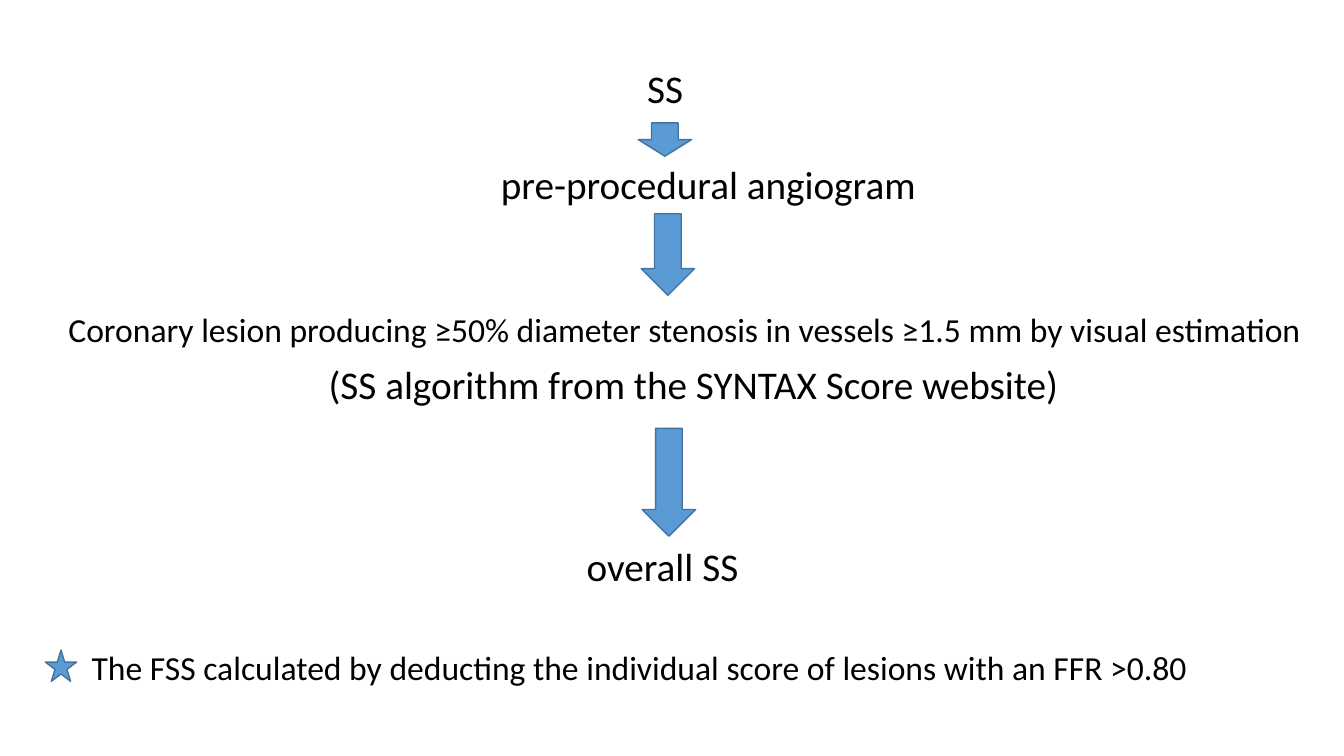
from dataclasses import dataclass

from pptx import Presentation
from pptx.dml.color import RGBColor
from pptx.enum import shapes, text
from pptx.util import Inches, Pt


@dataclass(frozen=True)
class Theme:
    font: str = "Calibri"
    ink: RGBColor = RGBColor(0x00, 0x00, 0x00)
    fill: RGBColor = RGBColor(0x5B, 0x9B, 0xD5)
    outline: RGBColor = RGBColor(0x43, 0x73, 0x9E)
    step_size: int = 28
    detail_size: int = 24


THEME = Theme()

STEPS = [
    ("SS", THEME.step_size, (5.87, 0, 0.56, 0.57)),
    ("pre-procedural angiogram", THEME.step_size, (4.42, 0.95, 4.36, 0.57)),
    ("Coronary lesion producing ≥50% diameter stenosis in vessels ≥1.5 mm by visual estimation",
     THEME.detail_size, (0.13, 2.43, 12.7, 0.5)),
    ("(SS algorithm from the SYNTAX Score website)", THEME.step_size, (2.71, 2.94, 7.52, 0.57)),
    ("overall SS", THEME.step_size, (5.27, 4.74, 1.72, 0.57)),
]
ARROWS = [(5.88, 0.63, 0.33), (5.91, 1.53, 0.81), (5.92, 3.66, 1.07)]
ARROW_WIDTH = 0.53
STAR_SIZE = 0.31


def add_label(page, wording, size, left, top, width, height):
    box = page.shapes.add_textbox(Inches(left), Inches(top), Inches(width), Inches(height))
    frame = box.text_frame
    frame.word_wrap = size == THEME.detail_size
    frame.auto_size = text.MSO_AUTO_SIZE.SHAPE_TO_FIT_TEXT
    para = frame.paragraphs[0]
    para.text = wording
    para.font.name = THEME.font
    para.font.size = Pt(size)
    para.font.color.rgb = THEME.ink


def add_marker(page, kind, left, top, width, height):
    marker = page.shapes.add_shape(kind, Inches(left), Inches(top), Inches(width), Inches(height))
    marker.shadow.inherit = False
    marker.fill.solid()
    marker.fill.fore_color.rgb = THEME.fill
    marker.line.color.rgb = THEME.outline
    marker.line.width = Pt(1)


def add_flow(page, left, top):
    for wording, size, (x, y, width, height) in STEPS:
        add_label(page, wording, size, left + x, top + y, width, height)
    for x, y, height in ARROWS:
        add_marker(page, shapes.MSO_SHAPE.DOWN_ARROW, left + x, top + y, ARROW_WIDTH, height)


def add_footnote(page, left, top, width, height):
    indent = 0.36
    add_label(page, "The FSS calculated by deducting the individual score of lesions with an FFR >0.80",
              THEME.detail_size, left + indent, top, width - indent, height)
    add_marker(page, shapes.MSO_SHAPE.STAR_5_POINT, left, top + 0.08, STAR_SIZE, STAR_SIZE)


def main():
    deck = Presentation()
    deck.slide_width, deck.slide_height = Inches(13.33), Inches(7.5)
    page = deck.slides.add_slide(deck.slide_layouts.get_by_name("Blank"))
    add_flow(page, 0.45, 0.59)
    add_footnote(page, 0.45, 6.37, 12.62, 0.5)
    deck.save("out.pptx")


if __name__ == "__main__":
    main()
